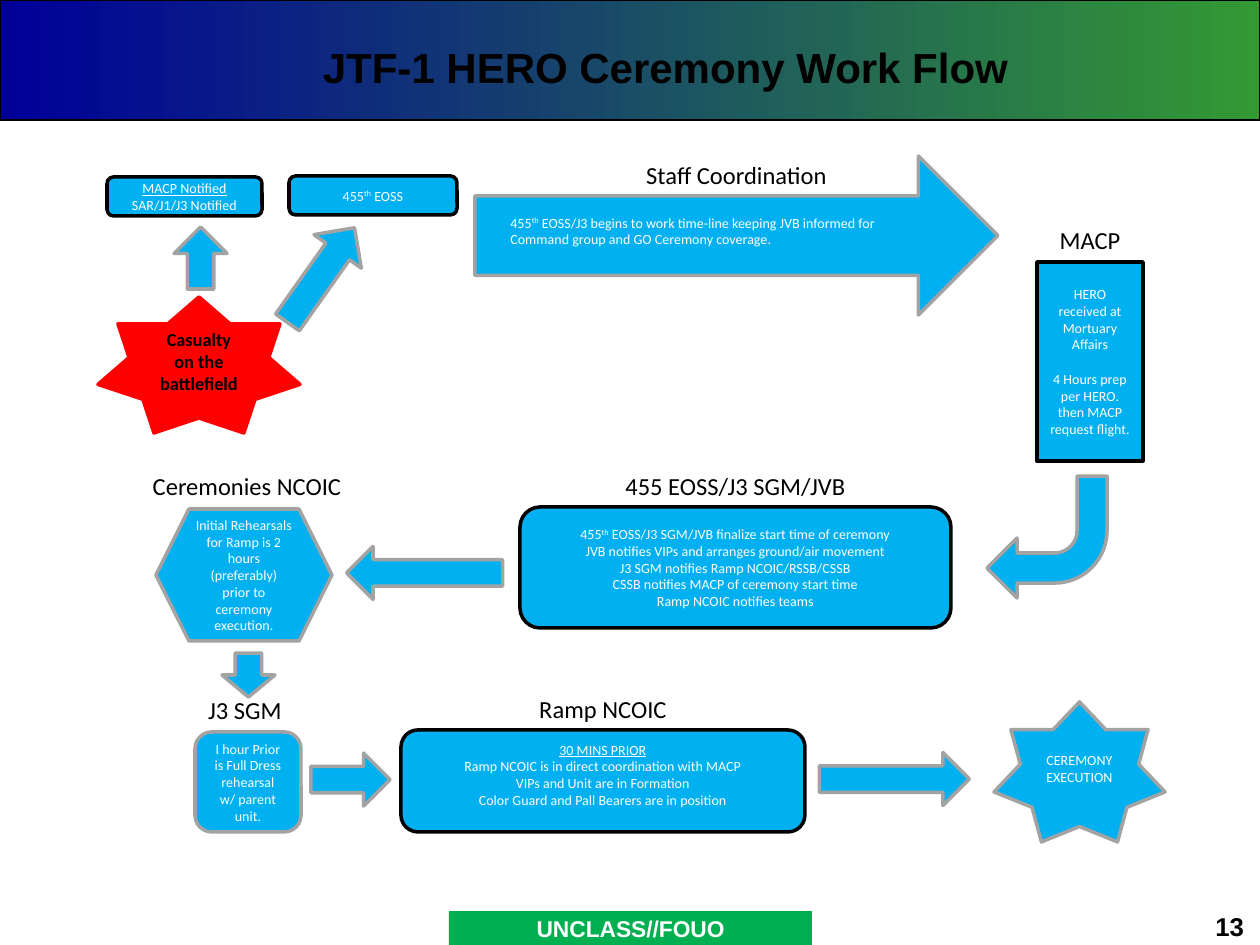
from pptx import Presentation
from pptx.dml.color import RGBColor
from pptx.enum.shapes import MSO_SHAPE as SHAPE
from pptx.enum.text import MSO_ANCHOR as ANCHOR, PP_ALIGN as ALIGN
from pptx.util import Emu, Pt

BLUE, BLACK, GREY, WHITE = "00B0F0", "000000", "A3A3A3", "FFFFFF"
RED, GREEN, NAVY, LEAF = "FF0000", "00B050", "000099", "339933"
LABEL_H = 43
ARROW_W = 53
ORDINAL = [("455", ""), ("th", "sup")]


def px(n):
    """Turn px into EMU at 126 px to the inch."""
    return Emu(round(n * 914400 / 126))


def rgb(color):
    """Turn a hex string into a colour."""
    return RGBColor.from_string(color)


def write(sp, paras, size=8, color=WHITE, font="Calibri", bold=False,
          align=ALIGN.CENTER, anchor=ANCHOR.MIDDLE, gap=0, inset=None):
    """Fill a shape with paragraphs of plain strings or (text, style) runs."""
    tf = sp.text_frame
    tf.word_wrap = True
    tf.vertical_anchor = anchor
    if inset is not None:
        tf.margin_left = tf.margin_right = px(inset)
        tf.margin_top = tf.margin_bottom = px(inset // 2)
    for i, para in enumerate(paras):
        p = tf.add_paragraph() if i else tf.paragraphs[0]
        p.alignment = align
        if i and gap:
            p.space_before = Pt(gap)
        for text, style in [(para, "")] if isinstance(para, str) else para:
            r = p.add_run()
            r.text = text
            r.font.name, r.font.size, r.font.bold = font, Pt(size), bold
            r.font.color.rgb = rgb(color)
            if style == "under":
                r.font.underline = True
            elif style == "sup":
                r.font._element.set("baseline", "30000")


def shape(s, kind, x, y, w, h, fill=BLUE, line=GREY, rot=0, weight=2):
    """Add a preset shape with a solid fill and an optional outline."""
    sp = s.shapes.add_shape(kind, px(x), px(y), px(w), px(h))
    sp.shadow.inherit = False
    sp.rotation = rot
    sp.fill.solid()
    sp.fill.fore_color.rgb = rgb(fill)
    if line:
        sp.line.color.rgb = rgb(line)
        sp.line.width = Pt(weight)
    else:
        sp.line.fill.background()
    return sp


def card(s, kind, x, y, w, h, paras, fill=BLUE, line=BLACK, **style):
    """Add an outlined shape that holds text."""
    write(shape(s, kind, x, y, w, h, fill, line), paras, **style)


def text(s, x, y, w, h, value, **style):
    """Add a one-line text box."""
    write(s.shapes.add_textbox(px(x), px(y), px(w), px(h)), [value], **style)


def label(s, x, y, w, value):
    """Add a step heading."""
    text(s, x, y, w, LABEL_H, value, size=14, color=BLACK, anchor=ANCHOR.TOP)


def arrow(s, x, y, length, rot, width=ARROW_W):
    """Add a block arrow, its unrotated box starting at x, y."""
    shape(s, SHAPE.DOWN_ARROW, x, y, width, length, rot=rot)


def header(s, x, y, w, h):
    """Draw the gradient banner and the title."""
    banner = shape(s, SHAPE.RECTANGLE, x, y, w, h, line=BLACK, weight=0.75)
    banner.fill.gradient()
    banner.fill.gradient_angle = 0
    for stop, color in zip(banner.fill.gradient_stops, (NAVY, LEAF)):
        stop.color.rgb = rgb(color)
    text(s, x + 146, y + 30, 1039, 73, "JTF-1 HERO Ceremony Work Flow",
         size=24, color=BLACK, font="Arial", bold=True)


def footer(s, x, y, w, h):
    """Draw the classification bar and the slide number."""
    card(s, SHAPE.RECTANGLE, x + 449, y, 363, h, ["UNCLASS//FOUO"], GREEN, None,
         size=13, font="Arial", bold=True, inset=16)
    text(s, x + w - 74, y, 62, 30, "13", size=14.7, color=BLACK, font="Arial",
         bold=True, align=ALIGN.RIGHT, inset=4)


def notification(s, x, y, w, h):
    """Draw the casualty star and the two offices it alerts."""
    card(s, SHAPE.STAR_7_POINT, x, y + h - 136, 202, 136,
         ["Casualty on the battlefield"], RED, RED,
         size=10.5, color=BLACK, bold=True)
    card(s, SHAPE.ROUNDED_RECTANGLE, x + 9, y + 1, 155, 39,
         [[("MACP Notified", "under")], "SAR/J1/J3 Notified"])
    card(s, SHAPE.ROUNDED_RECTANGLE, x + w - 168, y, 168, 39,
         [ORDINAL + [(" EOSS", "")]])
    arrow(s, x + 76, y + 51, 62, 180)
    arrow(s, x + 194, y + 41, 116, 215.3, 58)


def coordination(s, x, y, w, h):
    """Draw the wide staff coordination arrow with its note."""
    label(s, x, y - 2, w, "Staff Coordination")
    arrow(s, x + (w - h) / 2, y + (h - w) / 2, w, 270, h)
    note = " EOSS/J3 begins to work time-line keeping JVB informed for Command group and GO Ceremony coverage."
    card(s, SHAPE.RECTANGLE, x + 23, y + 52, 399, 47, [ORDINAL + [(note, "")]],
         line=None, align=ALIGN.LEFT, anchor=ANCHOR.TOP)


def mortuary(s, x, y, w, h):
    """Draw the mortuary step and the bent arrow leaving it."""
    label(s, x, y, w, "MACP")
    card(s, SHAPE.RECTANGLE, x, y + LABEL_H, w, 199,
         ["HERO received at Mortuary Affairs",
          "4 Hours prep per HERO. then MACP request flight."], gap=10)
    shape(s, SHAPE.BENT_ARROW, x - 50, y + h - 122, 120, 122, rot=180)


def planning(s, x, y, w, h):
    """Draw the timing step and the rehearsal step it leads to."""
    label(s, x + w - 431, y, 431, "455 EOSS/J3 SGM/JVB")
    card(s, SHAPE.ROUNDED_RECTANGLE, x + w - 431, y + 42, 431, 121,
         [ORDINAL + [(" EOSS/J3 SGM/JVB finalize start time of ceremony", "")],
          "JVB notifies VIPs and arranges ground/air movement",
          "J3 SGM notifies Ramp NCOIC/RSSB/CSSB",
          "CSSB notifies MACP of ceremony start time",
          "Ramp NCOIC notifies teams"])
    arrow(s, x + 268, y + 30, 156, 90)
    label(s, x, y, 234, "Ceremonies NCOIC")
    card(s, SHAPE.HEXAGON, x + 26, y + 44, 176, 132,
         ["Initial Rehearsals for Ramp is 2 hours (preferably)",
          "prior to ceremony execution."], line=GREY)
    arrow(s, x + 92, y + h - 44, 44, 0)


def execution(s, x, y, w, h):
    """Draw the closing row from dress rehearsal to ceremony."""
    label(s, x, y + 1, 110, "J3 SGM")
    card(s, SHAPE.ROUNDED_RECTANGLE, x + 5, y + 44, 106, 100,
         ["I hour Prior is Full Dress rehearsal w/ parent unit."], line=GREY)
    arrow(s, x + 134, y + 52, 79, 270)
    label(s, x + 211, y, 404, "Ramp NCOIC")
    card(s, SHAPE.ROUNDED_RECTANGLE, x + 211, y + 42, 404, 102,
         [[("30 MINS PRIOR", "under")],
          "Ramp NCOIC is in direct coordination with MACP",
          "VIPs and Unit are in Formation",
          "Color Guard and Pall Bearers are in position"], anchor=ANCHOR.TOP)
    arrow(s, x + 678, y + 16, 150, 270)
    card(s, SHAPE.STAR_7_POINT, x + w - 171, y + 14, 171, 140,
         ["CEREMONY EXECUTION"], line=GREY)


def main():
    """Build the workflow slide."""
    prs = Presentation()
    prs.slide_width, prs.slide_height = px(1260), px(945)
    s = prs.slides.add_slide(prs.slide_layouts[6])
    header(s, 0, 0, 1260, 120)
    footer(s, 0, 911, 1260, 34)
    notification(s, 98, 176, 359, 257)
    coordination(s, 475, 156, 523, 159)
    mortuary(s, 1037, 219, 106, 379)
    planning(s, 130, 465, 821, 232)
    execution(s, 190, 688, 975, 154)
    prs.save("out.pptx")


if __name__ == "__main__":
    main()
